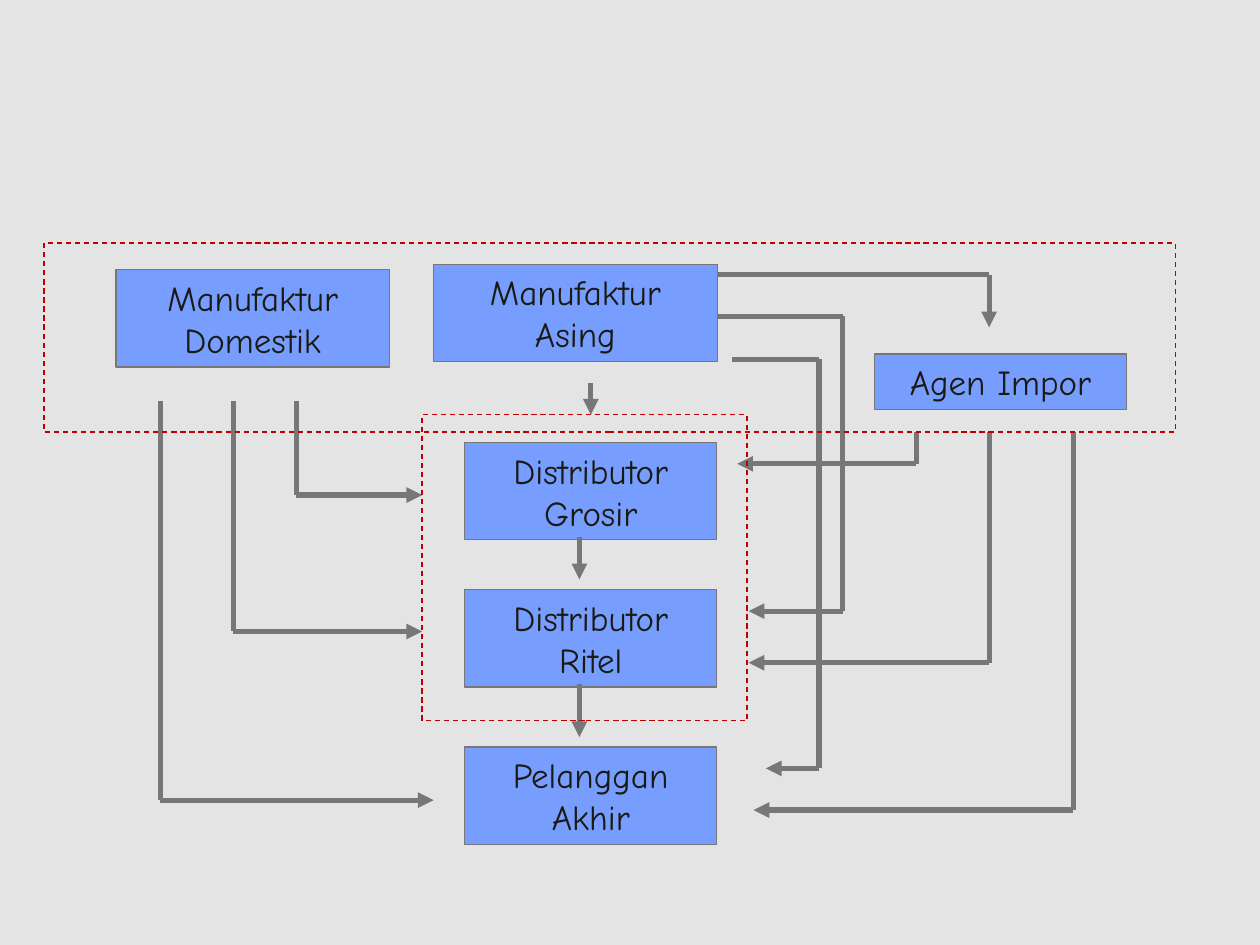
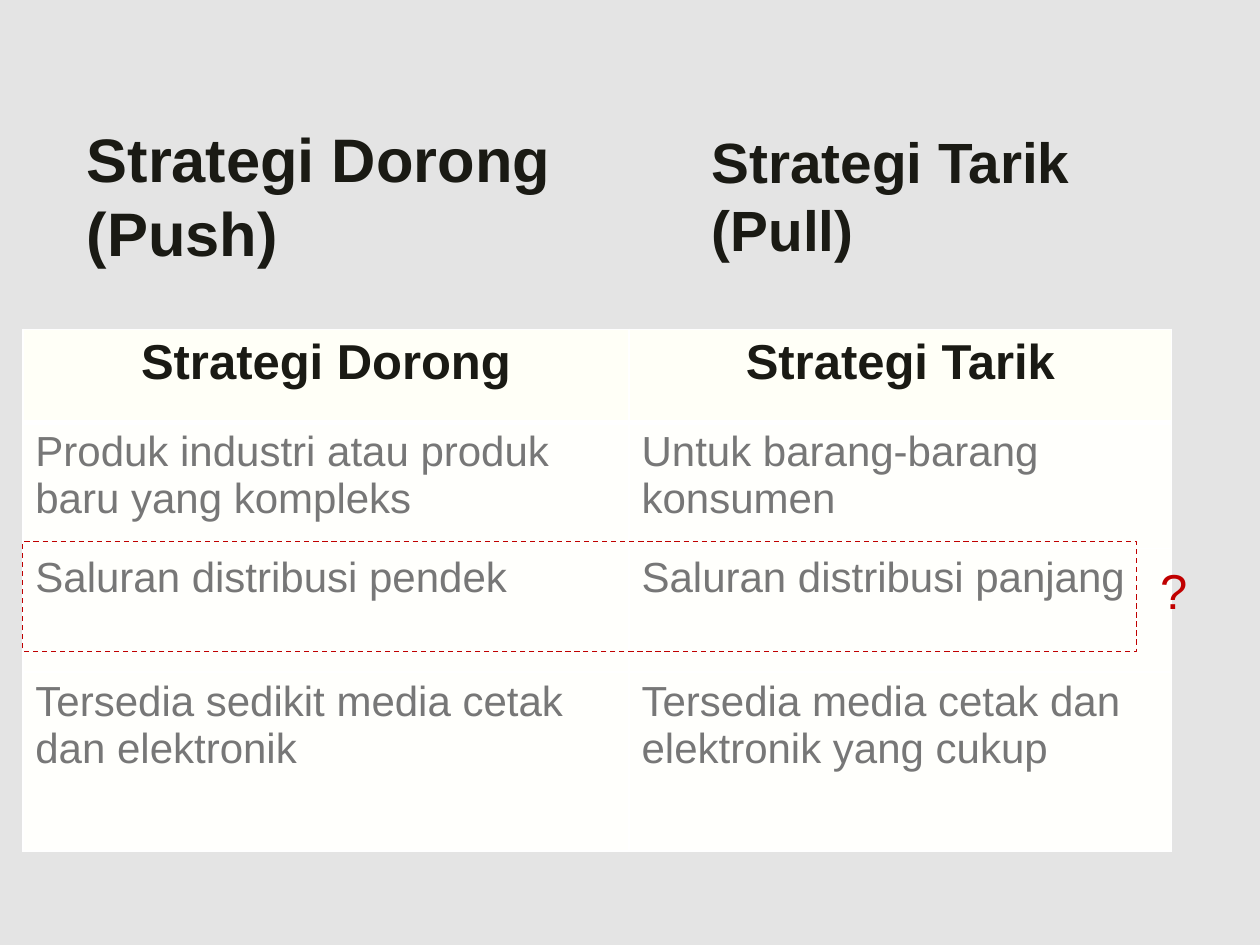
from itertools import pairwise
from pptx import Presentation
from pptx import util as u
from pptx.dml.color import RGBColor
from pptx.enum import dml, shapes, text
from pptx.oxml import parse_xml
from pptx.oxml.ns import nsdecls

Cm, Pt = u.Cm, u.Pt
PAPER = RGBColor(0xE4, 0xE4, 0xE4)
BLUE = RGBColor(0x77, 0x9E, 0xFF)
GREY = RGBColor(0x77, 0x77, 0x77)
INK = RGBColor(0x1A, 0x1A, 0x14)
RED = RGBColor(0xC0, 0x00, 0x00)
HEAD = RGBColor(0xFF, 0xFF, 0xF7)
BODY = RGBColor(0xFF, 0xFF, 0xFC)
CENTER, LEFT = text.PP_ALIGN.CENTER, text.PP_ALIGN.LEFT


def add_rect(s, at, line, fill=None):
    sp = s.shapes.add_shape(shapes.MSO_SHAPE.RECTANGLE, *map(Cm, at))
    sp.shadow.inherit = False
    sp.line.color.rgb = line
    sp.line.width = Pt(0.75)
    if fill is None:
        sp.fill.background()
        sp.line.dash_style = dml.MSO_LINE.DASH
    else:
        sp.fill.solid()
        sp.fill.fore_color.rgb = fill
    return sp


def write(tf, words, color, align=LEFT, **fmt):
    p = tf.paragraphs[0]
    p.alignment = align
    r = p.add_run()
    r.text = words
    r.font.color.rgb = color
    for key, value in fmt.items():
        setattr(r.font, key, value)


prs = Presentation()
prs.slide_width, prs.slide_height = Cm(25.4), Cm(19.05)
channels, strategies = [prs.slides.add_slide(prs.slide_layouts[6]) for _ in range(2)]
for s in (channels, strategies):
    s.background.fill.solid()
    s.background.fill.fore_color.rgb = PAPER

parties = {
    "Manufaktur Domestik": (2.34, 5.44, 5.51, 1.96),
    "Manufaktur Asing": (8.74, 5.33, 5.72, 1.96),
    "Agen Impor": (17.63, 7.14, 5.08, 1.12),
    "Distributor Grosir": (9.37, 8.92, 5.08, 1.96),
    "Distributor Ritel": (9.37, 11.89, 5.08, 1.96),
    "Pelanggan Akhir": (9.37, 15.06, 5.08, 1.96),
}
for name, at in parties.items():
    sp = add_rect(channels, at, GREY, BLUE)
    write(sp.text_frame, name, INK, CENTER, name="Comic Neue", size=Pt(20))

routes = [
    [(3.23, 8.08), (3.23, 16.13), (8.74, 16.13)],
    [(4.7, 8.08), (4.7, 12.73), (8.51, 12.73)],
    [(5.97, 8.08), (5.97, 9.98), (8.51, 9.98)],
    [(11.91, 7.72), (11.91, 8.36)],
    [(11.68, 10.82), (11.68, 11.68)],
    [(11.68, 13.79), (11.68, 14.86)],
    [(14.45, 5.54), (19.94, 5.54), (19.94, 6.6)],
    [(18.47, 8.71), (18.47, 9.35), (14.86, 9.35)],
    [(19.94, 8.71), (19.94, 13.36), (15.09, 13.36)],
    [(21.64, 8.71), (21.64, 16.33), (15.19, 16.33)],
    [(14.45, 6.38), (16.99, 6.38), (16.99, 12.32), (15.09, 12.32)],
    [(14.76, 7.24), (16.51, 7.24), (16.51, 15.49), (15.44, 15.49)],
]
for route in routes:
    for start, end in pairwise(route):
        c = channels.shapes.add_connector(
            shapes.MSO_CONNECTOR.STRAIGHT, *map(Cm, start + end))
        c.line.color.rgb = GREY
        c.line.width = Pt(3)
        if end == route[-1]:
            c.line._get_or_add_ln().append(
                parse_xml(f'<a:tailEnd {nsdecls("a")} type="triangle"/>'))
        c._element.spPr.append(parse_xml(f'<a:effectLst {nsdecls("a")}/>'))

for frame in ((8.51, 8.36, 6.55, 6.17), (0.89, 4.9, 22.81, 3.81)):
    add_rect(channels, frame, RED)

rows = [
    ("Strategi Dorong", "Strategi Tarik"),
    ("Produk industri atau produk baru yang kompleks", "Untuk barang-barang konsumen"),
    ("Saluran distribusi pendek", "Saluran distribusi panjang"),
    ("Tersedia sedikit media cetak dan elektronik",
     "Tersedia media cetak dan elektronik yang cukup"),
]
table = strategies.shapes.add_table(4, 2, *map(Cm, (0.46, 6.64, 23.16, 10.52))).table
for column, width in zip(table.columns, (12.22, 10.94)):
    column.width = Cm(width)
for i, (row, height) in enumerate(zip(table.rows, (1.88, 2.54, 2.49, 3.61))):
    row.height = Cm(height)
    for cell, words in zip(row.cells, rows[i]):
        for side in "LRTB":
            thick = (i, side) in ((0, "B"), (1, "T"))
            cell._tc.get_or_add_tcPr().append(parse_xml(
                f'<a:ln{side} {nsdecls("a")} w="{Pt(3 if thick else 1)}"><a:solidFill>'
                f'<a:srgbClr val="FFFFFF"/></a:solidFill></a:ln{side}>'))
        cell.fill.solid()
        cell.fill.fore_color.rgb = BODY if i else HEAD
        write(cell.text_frame, words, GREY if i else INK, LEFT if i else CENTER,
              name="Arial", size=Pt(24 if i else 28), bold=i == 0)

titles = [
    ("Strategi Tarik (Pull)", (14.1, 2.34, 10.11, 3.18), 32.4),
    ("Strategi Dorong (Push)", (1.5, 2.34, 11.28, 3.18), 35.1),
]
for words, at, size in titles:
    tf = strategies.shapes.add_textbox(*map(Cm, at)).text_frame
    tf.word_wrap = True
    tf.vertical_anchor = text.MSO_ANCHOR.MIDDLE
    write(tf, words, INK, name="Arial", size=Pt(size), bold=True)

add_rect(strategies, (0.46, 10.92, 22.45, 2.21), RED)
tf = strategies.shapes.add_textbox(*map(Cm, (23.14, 11.18, 1.07, 1.45))).text_frame
tf.word_wrap = False
write(tf, "?", RED, name="Arial", size=Pt(28))

prs.save("out.pptx")
